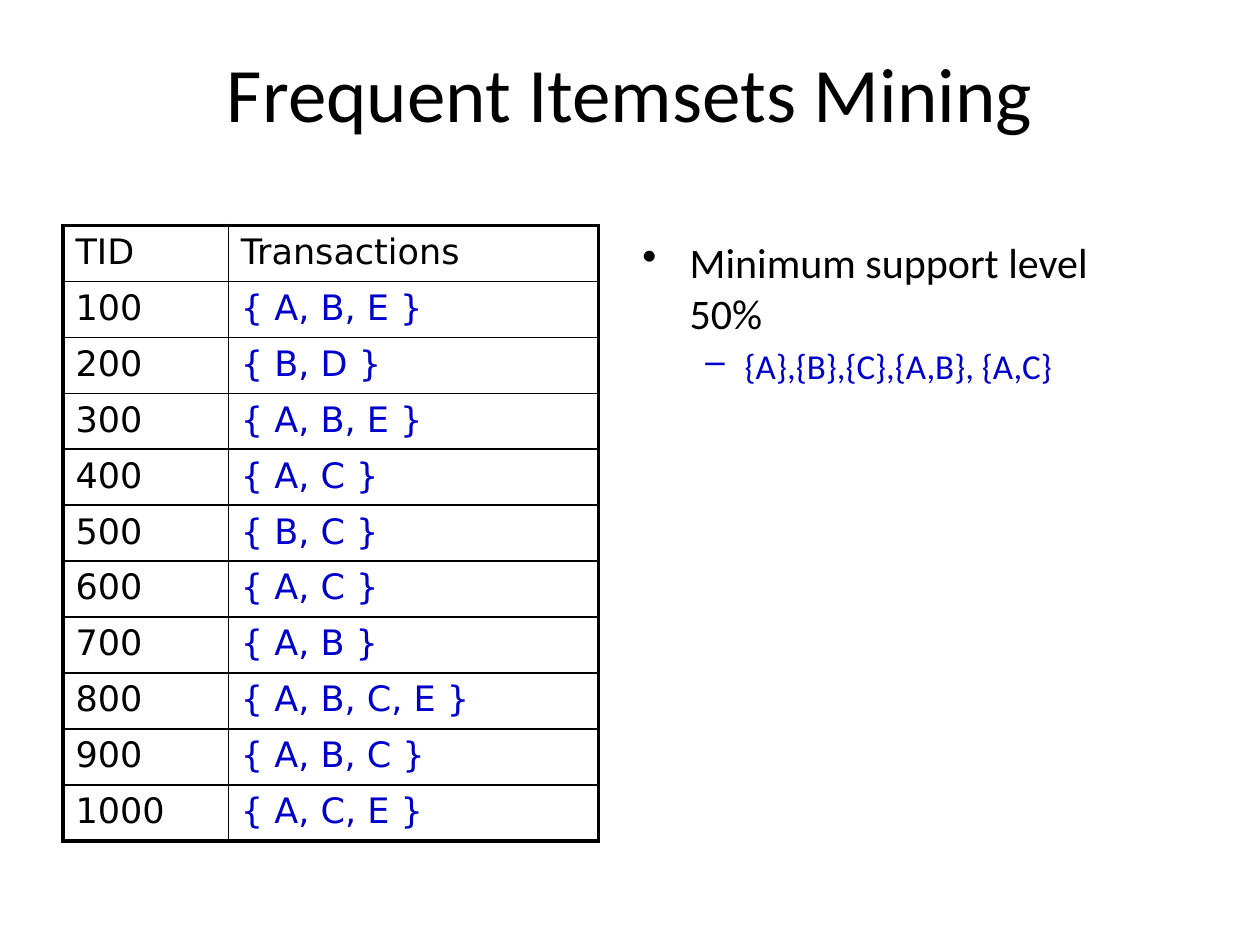
from pptx import Presentation
from pptx.dml.color import RGBColor
from pptx.enum.text import MSO_ANCHOR, PP_ALIGN
from pptx.oxml.ns import qn
from pptx.util import Pt
from lxml.etree import SubElement

COLORS = {"black": "000000", "blue": "0000CC"}


def style(para, text, size, color, face="Calibri"):
    para.text = text
    para.font.size = Pt(size)
    para.font.name = face
    para.font.color.rgb = RGBColor.from_string(COLORS[color])


def border(cell, side, width):
    line = SubElement(cell._tc.get_or_add_tcPr(), qn("a:ln" + side), w=str(Pt(width)))
    fill = SubElement(line, qn("a:solidFill"))
    SubElement(fill, qn("a:srgbClr"), val=COLORS["black"])


prs = Presentation()
prs.slide_width, prs.slide_height = Pt(720), Pt(540)
slide = prs.slides.add_slide(prs.slide_layouts[6])

# Title
title = slide.shapes.add_textbox(Pt(36), Pt(21.6), Pt(648), Pt(62)).text_frame
title.word_wrap = True
title.vertical_anchor = MSO_ANCHOR.MIDDLE
style(title.paragraphs[0], "Frequent Itemsets Mining", 44, "black")
title.paragraphs[0].alignment = PP_ALIGN.CENTER

# Transactions table
baskets = ["A, B, E", "B, D", "A, B, E", "A, C", "B, C",
           "A, C", "A, B", "A, B, C, E", "A, B, C", "A, C, E"]
rows = [("TID", "Transactions")]
rows += [(str(100 * n), f"{{ {items} }}") for n, items in enumerate(baskets, 1)]
last = len(rows) - 1
table = slide.shapes.add_table(len(rows), 2, Pt(36), Pt(128.8), Pt(306), Pt(352)).table
table.first_row = table.horz_banding = False
table.columns[0].width, table.columns[1].width = Pt(94.5), Pt(211.5)
for r, row in enumerate(rows):
    table.rows[r].height = Pt(32)
    for c, text in enumerate(row):
        cell = table.cell(r, c)
        color = "blue" if r and c else "black"
        style(cell.text_frame.paragraphs[0], text, 20, color, "DejaVu Sans")
        # Thick outer frame, thin inner lines
        outer = {"L": c == 0, "R": c == 1, "T": r == 0, "B": r == last}
        for side, thick in outer.items():
            border(cell, side, 2.25 if thick else 1)
        cell.fill.background()

# Support level bullets
body = slide.shapes.add_textbox(Pt(360), Pt(131.8), Pt(304), Pt(360)).text_frame
body.word_wrap = True
points = [("Minimum support level 50%", 24, "black", "•", 27, 27),
          ("{A},{B},{C},{A,B}, {A,C}", 20, "blue", "–", 58.5, 22.5)]
for level, (text, size, color, mark, left, hang) in enumerate(points):
    para = body.add_paragraph() if level else body.paragraphs[0]
    style(para, text, size, color)
    para.level = level
    para.space_before = Pt(size * 0.2)
    props = para._p.get_or_add_pPr()
    props.set("marL", str(Pt(left)))
    props.set("indent", str(Pt(-hang)))
    bullet = props.makeelement(qn("a:buChar"), {"char": mark})
    props.find(qn("a:spcBef")).addnext(bullet)

prs.save("out.pptx")
